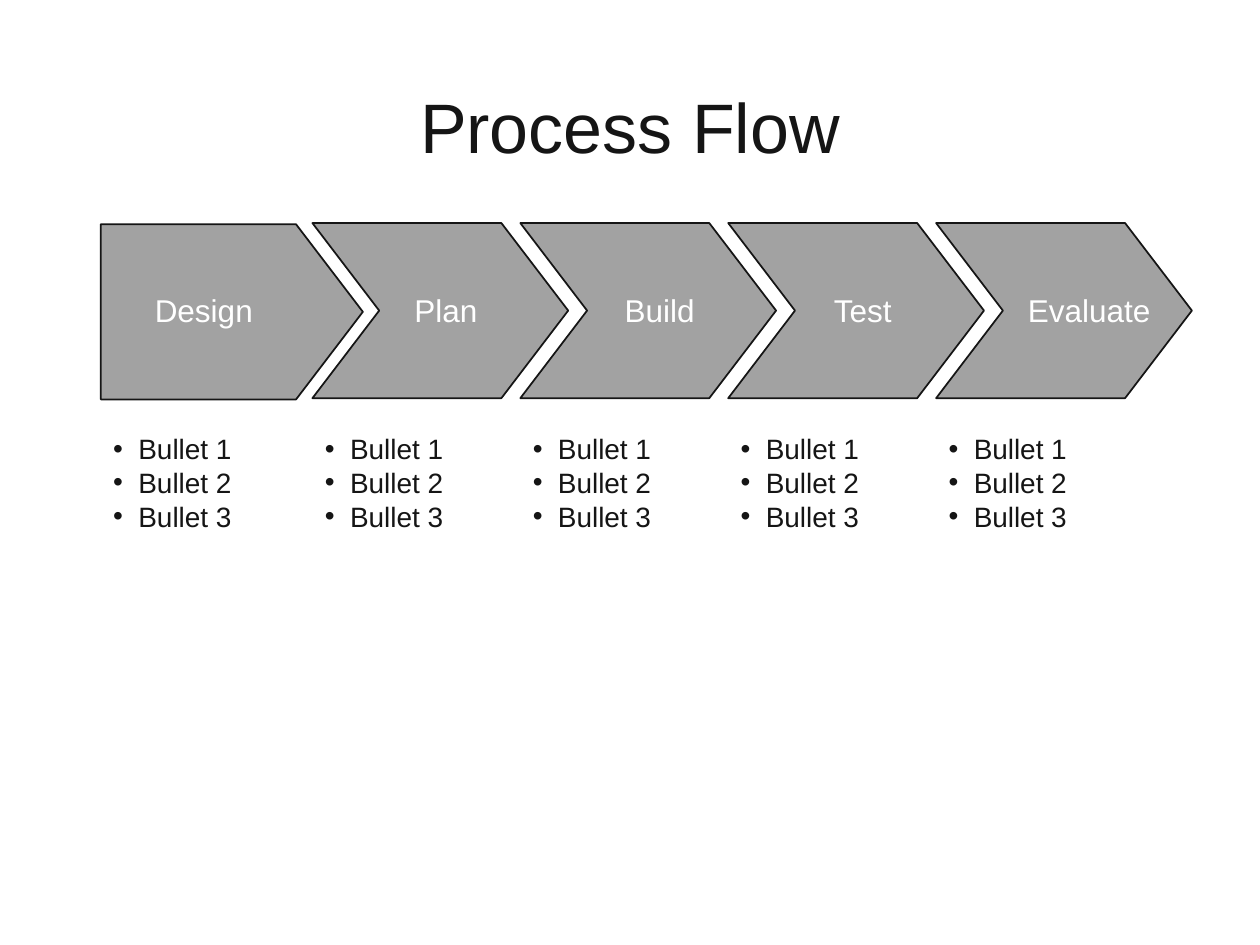
from dataclasses import dataclass

from lxml import etree
from pptx import Presentation
from pptx.dml.color import RGBColor
from pptx.enum.shapes import MSO_SHAPE as Shape
from pptx.enum.text import MSO_ANCHOR as Anchor, MSO_AUTO_SIZE as AutoSize, PP_ALIGN as Align
from pptx.oxml.ns import qn
from pptx.util import Inches, Pt


@dataclass(frozen=True)
class Theme:
    font: str = "Arial"
    ink: RGBColor = RGBColor(0x15, 0x15, 0x15)
    arrow: RGBColor = RGBColor(0xA2, 0xA2, 0xA2)
    label: RGBColor = RGBColor(0xFF, 0xFF, 0xFF)
    title_size: int = 40
    label_size: int = 18
    bullet_size: int = 16
    line_width: int = 1


THEME = Theme()
STAGES = [
    ("Design", 1.13, 0.98),
    ("Plan", 3.19, 0.7),
    ("Build", 4.86, 0.76),
    ("Test", 6.52, 0.69),
    ("Evaluate", 8.06, 1.17),
]
BULLETS = ["Bullet 1", "Bullet 2", "Bullet 3"]
FIRST_LEFT, SECOND_LEFT, PITCH = 0.8, 2.48, 1.65
ARROW_HEIGHT, POINT_DEPTH = 1.39, 0.53


def add_box(s, x, y, w, h, wrap=True):
    box = s.shapes.add_textbox(Inches(x), Inches(y), Inches(w), Inches(h))
    tf = box.text_frame
    tf.word_wrap = wrap
    return tf


def add_run(p, text, size, color):
    r = p.add_run()
    r.text = text
    r.font.name = THEME.font
    r.font.size = Pt(size)
    r.font.color.rgb = color


def add_title(s, text):
    tf = add_box(s, 0.5, 0.37, 9, 1.25)
    tf.vertical_anchor = Anchor.MIDDLE
    p = tf.paragraphs[0]
    p.alignment = Align.CENTER
    add_run(p, text, THEME.title_size, THEME.ink)


def add_bullets(s, x, items):
    tf = add_box(s, x, 3.38, 1.51, 2.57)
    for i, item in enumerate(items):
        p = tf.paragraphs[0] if i == 0 else tf.add_paragraph()
        pPr = p._p.get_or_add_pPr()
        pPr.set("marL", str(Inches(0.2)))
        pPr.set("indent", str(Inches(-0.2)))
        etree.SubElement(pPr, qn("a:buFont")).set("typeface", THEME.font)
        etree.SubElement(pPr, qn("a:buChar")).set("char", "•")
        add_run(p, item, THEME.bullet_size, THEME.ink)


def add_arrow(s, kind, x, y, w):
    sp = s.shapes.add_shape(kind, Inches(x), Inches(y), Inches(w), Inches(ARROW_HEIGHT))
    sp.adjustments[0] = POINT_DEPTH / ARROW_HEIGHT
    sp.shadow.inherit = False
    sp.fill.solid()
    sp.fill.fore_color.rgb = THEME.arrow
    sp.line.color.rgb = THEME.ink
    sp.line.width = Pt(THEME.line_width)


def add_label(s, text, x, w):
    tf = add_box(s, x, 2.26, w, 0.4, wrap=False)
    tf.auto_size = AutoSize.SHAPE_TO_FIT_TEXT
    add_run(tf.paragraphs[0], text, THEME.label_size, THEME.label)


def main():
    prs = Presentation()
    prs.slide_width, prs.slide_height = Inches(10), Inches(7.5)
    s = prs.slides.add_slide(prs.slide_layouts[6])

    add_title(s, "Process Flow")
    for i, (name, label_left, label_width) in enumerate(STAGES):
        if i == 0:
            x = FIRST_LEFT
            add_arrow(s, Shape.PENTAGON, x, 1.78, 2.08)
        else:
            x = SECOND_LEFT + PITCH * (i - 1)
            add_arrow(s, Shape.CHEVRON, x, 1.77, 2.03)
        add_label(s, name, label_left, label_width)
        add_bullets(s, x, BULLETS)

    prs.save("out.pptx")


if __name__ == "__main__":
    main()
